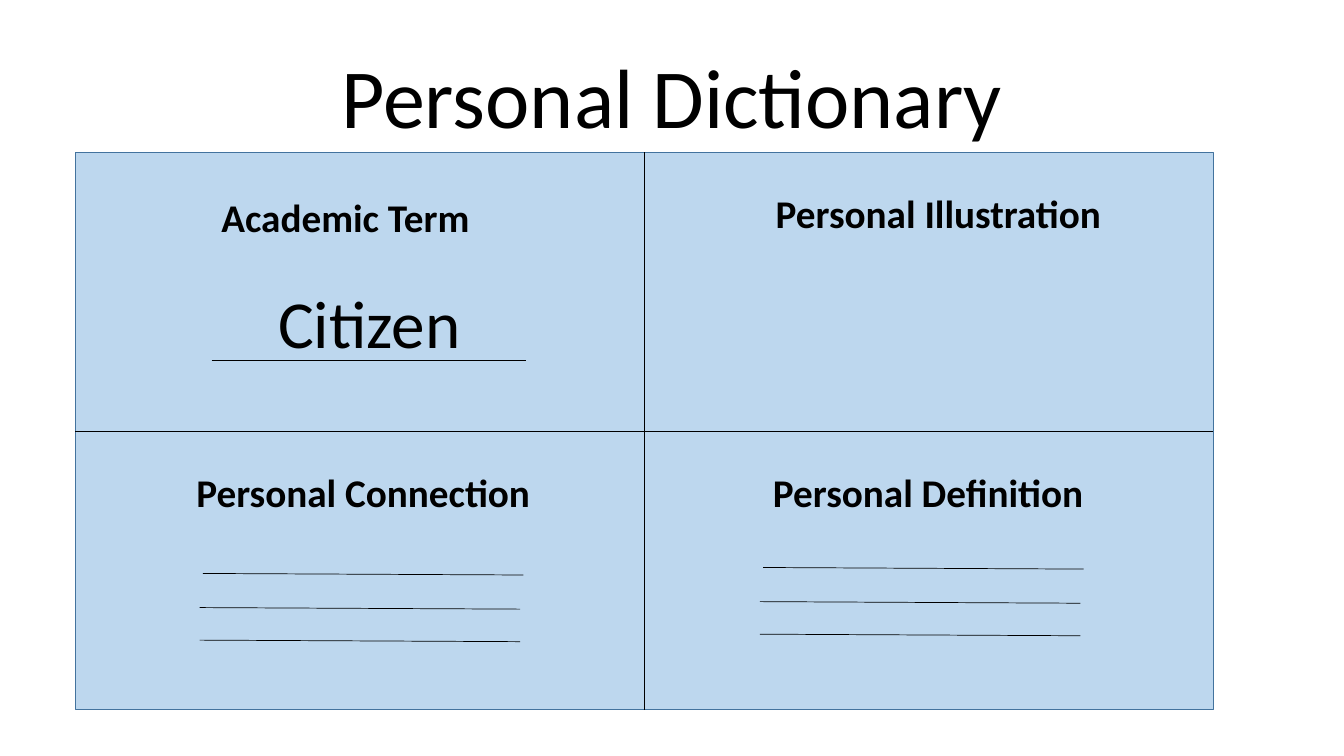
from dataclasses import dataclass

from lxml import etree
from pptx import Presentation
from pptx.dml.color import RGBColor
from pptx.enum.shapes import MSO_CONNECTOR, MSO_SHAPE
from pptx.enum.text import MSO_ANCHOR, MSO_AUTO_SIZE, PP_ALIGN
from pptx.oxml.ns import qn
from pptx.util import Cm, Pt


@dataclass(frozen=True)
class Theme:
    font: str = "Calibri"
    ink: RGBColor = RGBColor(0x00, 0x00, 0x00)
    panel: RGBColor = RGBColor(0xBD, 0xD7, 0xEE)
    border: RGBColor = RGBColor(0x43, 0x73, 0x9E)
    title_size: int = 60
    term_size: int = 48
    heading_size: int = 28
    border_width: float = 1
    rule_width: float = 0.5


THEME = Theme()

# Content: text and its box (left, top, width, height) in cm
TITLE = ("Personal Dictionary", (4.23, 0.94, 25.4, 2.87))
TERM = ("Citizen", (6.76, 6.96, 12.01, 2.31))
HEADINGS = [
    ("Academic Term", (5.33, 4.75, 7.92, 1.45)),
    ("Personal Illustration", (19.3, 4.65, 9.47, 1.45)),
    ("Personal Connection", (4.7, 11.68, 9.75, 1.45)),
    ("Personal Definition", (19.23, 11.68, 10.03, 1.45)),
]

# Layout in cm
PANEL = (1.9, 3.84, 28.68, 14.04)
TERM_RULE = (5.33, 9.07, 13.26, 9.07)
WRITING_BLOCKS = [(5.03, 14.45), (19.15, 14.3)]
WRITING_OFFSETS = [(0.08, 0), (0, 0.86), (0, 1.68)]
WRITING_LENGTH, WRITING_DROP = 8.08, 0.04


def add_text(slide, text, box, size, bold=False):
    shape = slide.shapes.add_textbox(*map(Cm, box))
    frame = shape.text_frame
    frame.word_wrap = True
    frame.text = text
    font = frame.paragraphs[0].runs[0].font
    font.name, font.size, font.bold = THEME.font, Pt(size), bold
    font.color.rgb = THEME.ink
    return frame


def add_rule(slide, *ends):
    rule = slide.shapes.add_connector(MSO_CONNECTOR.STRAIGHT, *map(Cm, ends))
    rule.line.color.rgb = THEME.ink
    rule.line.width = Pt(THEME.rule_width)
    etree.SubElement(rule._element.spPr, qn("a:effectLst"))


def main():
    presentation = Presentation()
    presentation.slide_width, presentation.slide_height = Cm(33.87), Cm(19.05)
    slide = presentation.slides.add_slide(presentation.slide_layouts[6])

    # Title
    title = add_text(slide, *TITLE, THEME.title_size)
    title.vertical_anchor = MSO_ANCHOR.BOTTOM
    title.paragraphs[0].alignment = PP_ALIGN.CENTER
    title.paragraphs[0].line_spacing = 0.9

    # Panel split into four quarters
    panel = slide.shapes.add_shape(MSO_SHAPE.RECTANGLE, *map(Cm, PANEL))
    panel.shadow.inherit = False
    panel.fill.solid()
    panel.fill.fore_color.rgb = THEME.panel
    panel.line.color.rgb = THEME.border
    panel.line.width = Pt(THEME.border_width)
    left, top, width, height = PANEL
    middle_x, middle_y = left + width / 2, top + height / 2
    add_rule(slide, middle_x, top, middle_x, top + height)
    add_rule(slide, left, middle_y, left + width, middle_y)

    # Headings and the term
    labels = [(text, box, THEME.heading_size, True) for text, box in HEADINGS]
    labels.append((*TERM, THEME.term_size, False))
    for label in labels:
        add_text(slide, *label).auto_size = MSO_AUTO_SIZE.SHAPE_TO_FIT_TEXT

    # Writing lines
    for block_x, block_y in WRITING_BLOCKS:
        for offset_x, offset_y in WRITING_OFFSETS:
            x, y = block_x + offset_x, block_y + offset_y
            add_rule(slide, x, y, x + WRITING_LENGTH, y + WRITING_DROP)
    add_rule(slide, *TERM_RULE)

    presentation.save("out.pptx")


if __name__ == "__main__":
    main()
